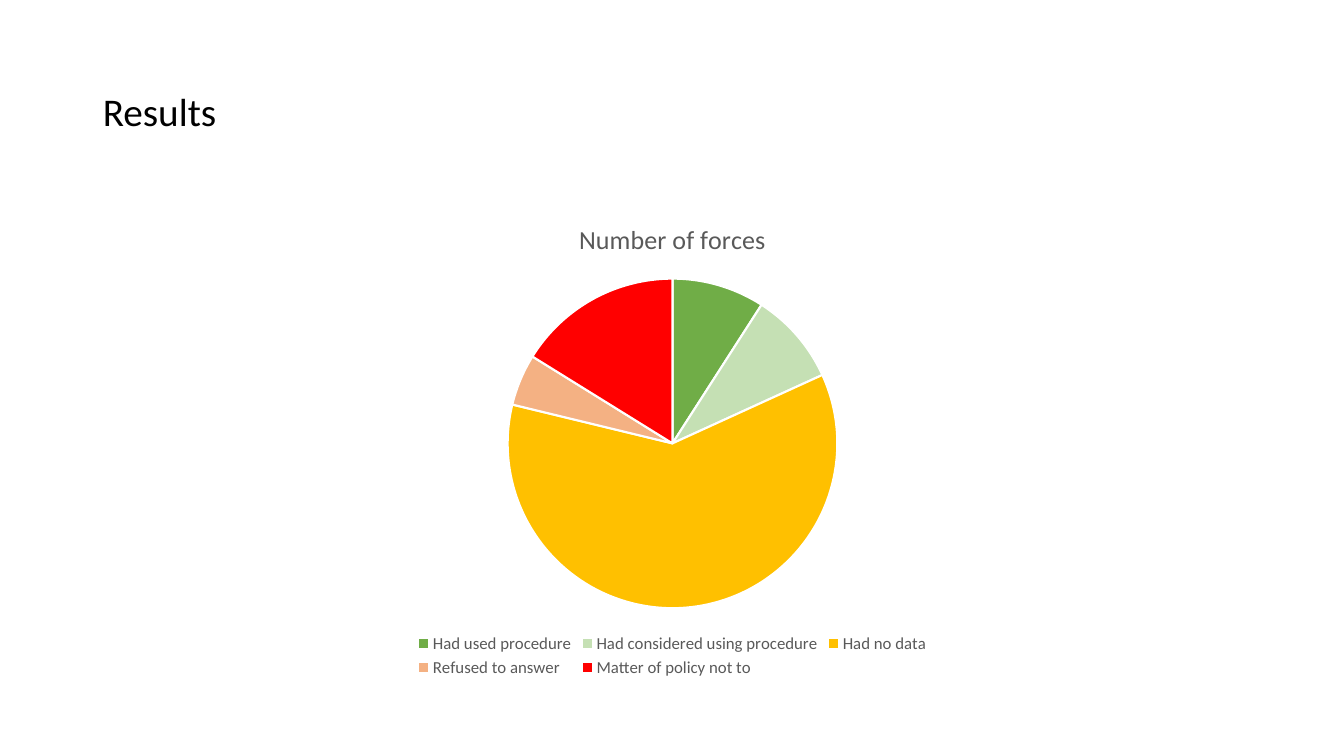
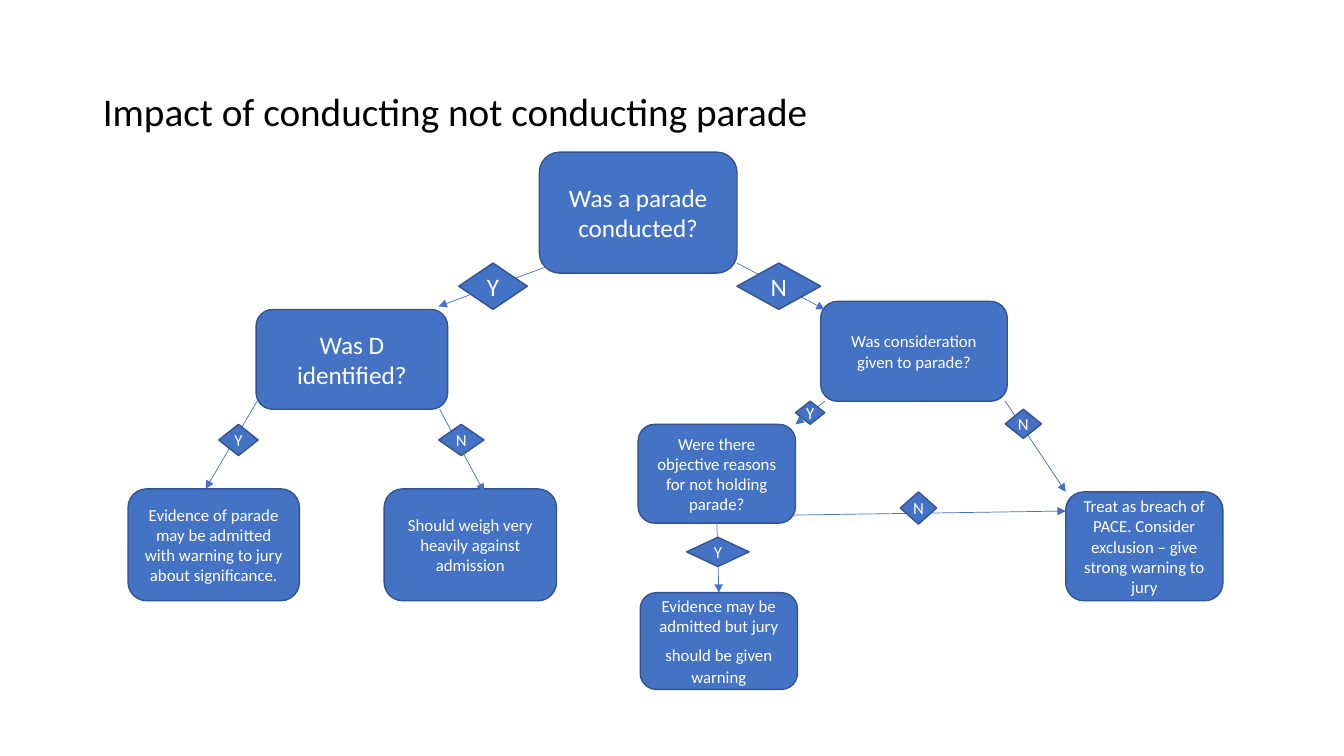
from dataclasses import dataclass

from lxml.etree import SubElement
from pptx import Presentation
from pptx.chart.data import CategoryChartData
from pptx.dml.color import RGBColor
from pptx.enum.chart import XL_CHART_TYPE, XL_LEGEND_POSITION
from pptx.enum.shapes import MSO_CONNECTOR, MSO_SHAPE
from pptx.enum.text import MSO_ANCHOR, PP_ALIGN
from pptx.oxml.ns import qn
from pptx.util import Inches, Pt


@dataclass(frozen=True)
class Theme:
    font: str = "Calibri"
    ink: str = "000000"
    muted: str = "595959"
    white: str = "FFFFFF"
    accent: str = "4472C4"
    outline: str = "325491"
    slices: tuple = ("70AD47", "C5E0B4", "FFC000", "F4B183", "FF0000")
    title: float = 28
    chart_title: float = 18.6
    large: float = 18
    small: float = 12


class Deck:
    """Hold the theme and the current slide, and draw its elements."""

    def __init__(self, theme):
        self.theme = theme
        self.presentation = Presentation()
        self.presentation.slide_width = Inches(13.33)
        self.presentation.slide_height = Inches(7.5)
        self.slide = None

    def style_font(self, font, size, color):
        font.name = self.theme.font
        font.size = Pt(size)
        font.bold = False
        font.color.rgb = RGBColor.from_string(color)

    def add_slide(self, title):
        self.slide = self.presentation.slides.add_slide(self.presentation.slide_layouts[5])
        shape = self.slide.shapes.title
        shape.left, shape.top = Inches(0.92), Inches(0.4)
        shape.width, shape.height = Inches(11.5), Inches(1.45)
        shape.text_frame.text = title
        shape.text_frame.vertical_anchor = MSO_ANCHOR.MIDDLE
        paragraph = shape.text_frame.paragraphs[0]
        paragraph.alignment = PP_ALIGN.LEFT
        paragraph.line_spacing = 0.9
        self.style_font(paragraph.runs[0].font, self.theme.title, self.theme.ink)

    def add_pie(self, left, top, width, height, name, values):
        data = CategoryChartData()
        data.categories = list(values)
        data.add_series(name, list(values.values()))
        chart = self.slide.shapes.add_chart(
            XL_CHART_TYPE.PIE, Inches(left), Inches(top), Inches(width), Inches(height), data
        ).chart
        self.style_font(chart.font, self.theme.small, self.theme.muted)
        chart.has_title = True
        chart.chart_title.include_in_layout = False
        chart.chart_title.text_frame.text = name
        title_run = chart.chart_title.text_frame.paragraphs[0].runs[0]
        self.style_font(title_run.font, self.theme.chart_title, self.theme.muted)
        chart.has_legend = True
        chart.legend.position = XL_LEGEND_POSITION.BOTTOM
        chart.legend.include_in_layout = False
        self.style_font(chart.legend.font, self.theme.small, self.theme.muted)
        plot = chart.plots[0]
        plot.vary_by_categories = True
        for index, color in enumerate(self.theme.slices):
            slice_format = plot.series[0].points[index].format
            slice_format.fill.solid()
            slice_format.fill.fore_color.rgb = RGBColor.from_string(color)
            slice_format.line.color.rgb = RGBColor.from_string(self.theme.white)
            slice_format.line.width = Pt(1.5)

    def add_node(self, preset, left, top, width, height, *runs):
        shape = self.slide.shapes.add_shape(
            preset, Inches(left), Inches(top), Inches(width), Inches(height)
        )
        shape.shadow.inherit = False
        shape.fill.solid()
        shape.fill.fore_color.rgb = RGBColor.from_string(self.theme.accent)
        shape.line.color.rgb = RGBColor.from_string(self.theme.outline)
        shape.line.width = Pt(1)
        shape.text_frame.word_wrap = True
        shape.text_frame.vertical_anchor = MSO_ANCHOR.MIDDLE
        paragraph = shape.text_frame.paragraphs[0]
        paragraph.alignment = PP_ALIGN.CENTER
        for text, size in runs:
            run = paragraph.add_run()
            run.text = text
            self.style_font(run.font, size, self.theme.white)
        return shape

    def add_box(self, left, top, width, height, *runs):
        self.add_node(MSO_SHAPE.FLOWCHART_ALTERNATE_PROCESS, left, top, width, height, *runs)

    def add_answer(self, left, top, width, height, letter):
        size = self.theme.large if height > 0.4 else self.theme.small
        shape = self.add_node(
            MSO_SHAPE.FLOWCHART_DECISION, left, top, width, height, (letter, size)
        )
        text_frame = shape.text_frame
        text_frame.word_wrap = False
        text_frame.margin_left = text_frame.margin_right = 0
        text_frame.margin_top = text_frame.margin_bottom = 0

    def add_arrow(self, start_x, start_y, end_x, end_y):
        arrow = self.slide.shapes.add_connector(
            MSO_CONNECTOR.STRAIGHT, Inches(start_x), Inches(start_y), Inches(end_x), Inches(end_y)
        )
        arrow.line.color.rgb = RGBColor.from_string(self.theme.accent)
        arrow.line.width = Pt(0.5)
        properties = arrow.element.spPr
        SubElement(properties.find(qn("a:ln")), qn("a:tailEnd"), type="triangle")
        SubElement(properties, qn("a:effectLst"))


def build_results(deck):
    deck.add_slide("Results")
    deck.add_pie(0.92, 2, 11.5, 4.76, "Number of forces", {
        "Had used procedure": 9,
        "Had considered using procedure": 9,
        "Had no data": 60,
        "Refused to answer": 5,
        "Matter of policy not to": 16,
    })


def build_decision_tree(deck):
    large, small = deck.theme.large, deck.theme.small
    deck.add_slide("Impact of conducting not conducting parade")

    boxes = [
        (5.35, 1.51, 1.96, 1.2, ("Was a parade conducted?", large)),
        (2.54, 3.07, 1.9, 0.99, ("Was D identified?", large)),
        (8.14, 2.99, 1.85, 0.99, ("Was consideration given to parade?", small)),
        (1.27, 4.85, 1.7, 1.11,
         ("Evidence of parade may be admitted with warning to jury about significance.", small)),
        (3.81, 4.85, 1.71, 1.11, ("Should weigh very heavily against admission", small)),
        (6.33, 4.21, 1.56, 0.98,
         ("Were there objective reasons for not holding parade?", small)),
        (10.57, 4.88, 1.56, 1.08,
         ("Treat as breach of PACE. Consider exclusion – give strong warning to jury", small)),
        (6.35, 5.88, 1.56, 0.96,
         ("Evidence may be admitted but jury should be given", small),
         (" ", large), ("warning", small)),
    ]
    arrows = [
        (5.52, 2.61, 4.35, 3.04),
        (7.31, 2.61, 8.18, 3.07),
        (2.55, 3.98, 2.04, 4.85),
        (4.36, 4.06, 4.8, 4.88),
        (8.18, 3.98, 7.89, 4.21),
        (9.97, 3.98, 10.57, 4.88),
        (7.87, 5.11, 10.57, 5.07),
        (7.11, 5.19, 7.13, 5.88),
    ]
    answers = [
        (4.55, 2.61, 0.68, 0.46, "Y"),
        (7.31, 2.61, 0.83, 0.46, "N"),
        (2.17, 4.21, 0.39, 0.31, "Y"),
        (4.35, 4.21, 0.45, 0.31, "N"),
        (7.89, 3.98, 0.29, 0.23, "Y"),
        (9.97, 4.06, 0.36, 0.29, "N"),
        (8.93, 4.88, 0.36, 0.32, "N"),
        (6.81, 5.33, 0.62, 0.29, "Y"),
    ]
    for box in boxes:
        deck.add_box(*box)
    for arrow in arrows:
        deck.add_arrow(*arrow)
    for answer in answers:
        deck.add_answer(*answer)


def main():
    deck = Deck(Theme())
    build_results(deck)
    build_decision_tree(deck)
    deck.presentation.save("out.pptx")


if __name__ == "__main__":
    main()
